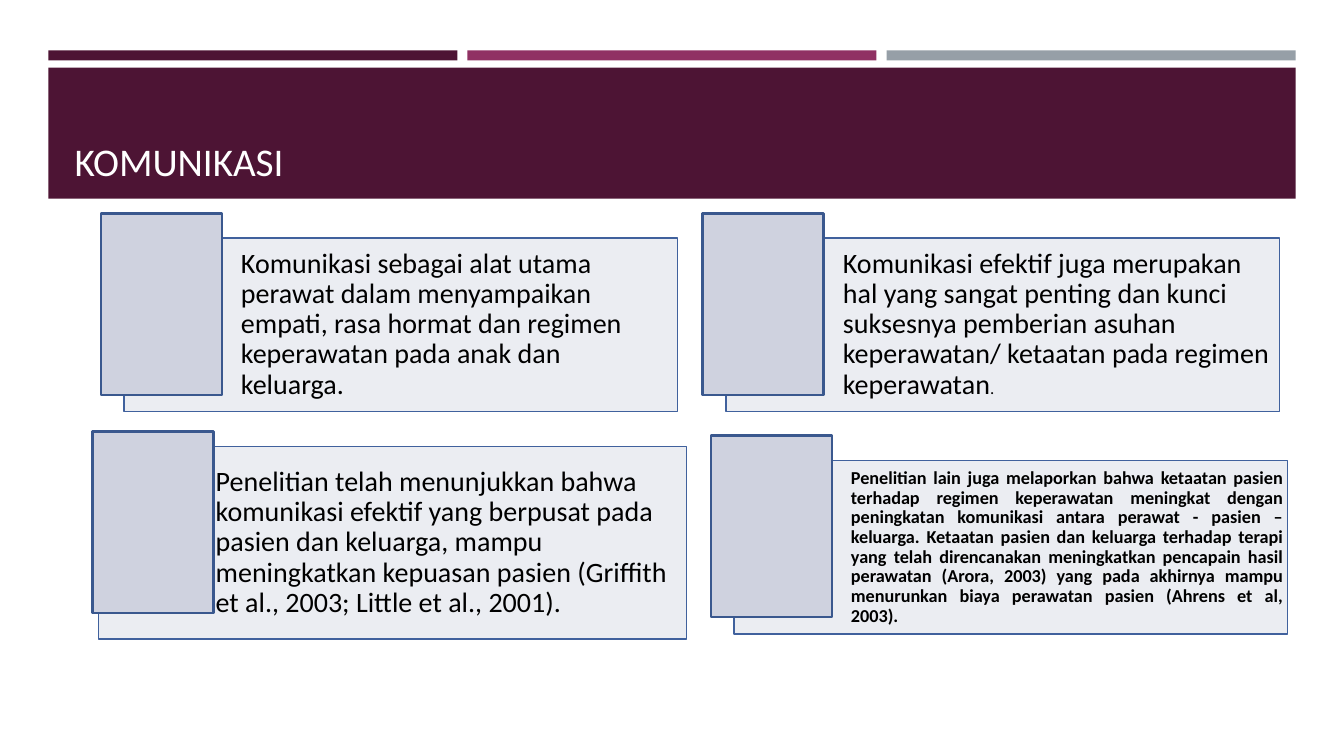
import pptx
import pptx.util
import pptx.dml.color
import pptx.enum.shapes
import pptx.enum.text
import lxml.etree

Inches, Pt = pptx.util.Inches, pptx.util.Pt
ALIGN, ANCHOR = pptx.enum.text.PP_ALIGN, pptx.enum.text.MSO_ANCHOR
FONT = "Calibri"
COLORS = {
    "plum": "4D1434", "rose": "903163", "grey": "969FA7", "white": "FFFFFF",
    "black": "000000", "pale": "CFD2DF", "edge": "40619D", "rim": "3A588E",
}

# Panel box, tile corner, text, size in points, padding, bold and justified, small tail
CARDS = [
    ((1.23, 2.36, 5.49, 1.72), (1, 2.12),
     "Komunikasi sebagai alat utama perawat dalam menyampaikan empati, rasa hormat "
     "dan regimen keperawatan pada anak dan keluarga.", 20, 0.08, False, ""),
    ((7.2, 2.36, 5.49, 1.72), (6.97, 2.12),
     "Komunikasi efektif juga merupakan hal yang sangat penting dan kunci suksesnya "
     "pemberian asuhan keperawatan/ ketaatan pada regimen keperawatan",
     20, 0.08, False, "."),
    ((0.98, 4.43, 5.83, 1.91), (0.92, 4.28),
     "Penelitian telah menunjukkan bahwa komunikasi efektif yang berpusat pada pasien "
     "dan keluarga, mampu meningkatkan kepuasan pasien (Griffith et al., 2003; "
     "Little et al., 2001).", 20, 0.08, False, ""),
    ((7.28, 4.57, 5.49, 1.72), (7.05, 4.32),
     "Penelitian lain juga melaporkan bahwa ketaatan pasien terhadap regimen keperawatan "
     "meningkat dengan peningkatan komunikasi antara perawat - pasien – keluarga. "
     "Ketaatan pasien dan keluarga terhadap terapi yang telah direncanakan meningkatkan "
     "pencapain hasil perawatan (Arora, 2003) yang pada akhirnya mampu menurunkan biaya "
     "perawatan pasien (Ahrens et al, 2003).", 13, 0.05, True, ""),
]


def color(name):
    return pptx.dml.color.RGBColor.from_string(COLORS[name])


def rect(slide, box, fill, line=None, width=1):
    shape = slide.shapes.add_shape(
        pptx.enum.shapes.MSO_SHAPE.RECTANGLE, *map(Inches, box))
    shape.shadow.inherit = False
    shape.fill.solid()
    shape.fill.fore_color.rgb = color(fill)
    if line:
        shape.line.color.rgb = color(line)
        shape.line.width = Pt(width)
    else:
        shape.line.fill.background()
    return shape


def fade(shape, percent):
    """Set the opacity of a solid fill."""
    tint = shape.fill._xPr.find(".//" + pptx.oxml.ns.qn("a:srgbClr"))
    alpha = lxml.etree.SubElement(tint, pptx.oxml.ns.qn("a:alpha"))
    alpha.set("val", str(percent * 1000))


def style(para, size, tone):
    para.font.name = FONT
    para.font.size = Pt(size)
    para.font.color.rgb = color(tone)


def header(slide, box, text):
    left, top, width, height = box
    gap = 0.1
    bar = (width - 2 * gap) / 3
    for i, fill in enumerate(("plum", "rose", "grey")):
        rect(slide, (left + i * (bar + gap), top, bar, 0.1), fill)
    rect(slide, (left, top + 0.17, width, height - 0.17), "plum")

    title = slide.shapes.title
    title.left, title.top = Inches(left + 0.16), Inches(top + 0.27)
    title.width, title.height = Inches(width - 0.31), Inches(height - 0.36)
    slide.shapes._spTree.append(title._element)  # bring in front of the band
    frame = title.text_frame
    frame.text = text
    frame.word_wrap = True
    frame.auto_size = pptx.enum.text.MSO_AUTO_SIZE.NONE
    frame.vertical_anchor = ANCHOR.BOTTOM
    para = frame.paragraphs[0]
    para.alignment = ALIGN.LEFT
    style(para, 28, "white")


def card(slide, box, corner, text, size, pad, strong, tail):
    panel = rect(slide, box, "pale", "edge")
    fade(panel, 40)
    frame = panel.text_frame
    frame.word_wrap = True
    frame.vertical_anchor = ANCHOR.MIDDLE
    frame.margin_left = Inches(1.16)
    frame.margin_top = frame.margin_right = frame.margin_bottom = Inches(pad)
    para = frame.paragraphs[0]
    para.text = text
    para.line_spacing = 0.9
    para.alignment = ALIGN.JUSTIFY if strong else ALIGN.LEFT
    style(para, size, "black")
    para.font.bold = strong
    if tail:
        run = para.add_run()
        run.text = tail
        run.font.size = Pt(12)
    rect(slide, (*corner, 1.2, 1.8), "pale", "rim", 1.75)


def main():
    deck = pptx.Presentation()
    deck.slide_width, deck.slide_height = Inches(13.33), Inches(7.5)
    slide = deck.slides.add_slide(deck.slide_layouts.get_by_name("Title Only"))
    header(slide, (0.48, 0.5, 12.37, 1.47), "KOMUNIKASI")
    for item in CARDS:
        card(slide, *item)
    deck.save("out.pptx")


if __name__ == "__main__":
    main()
